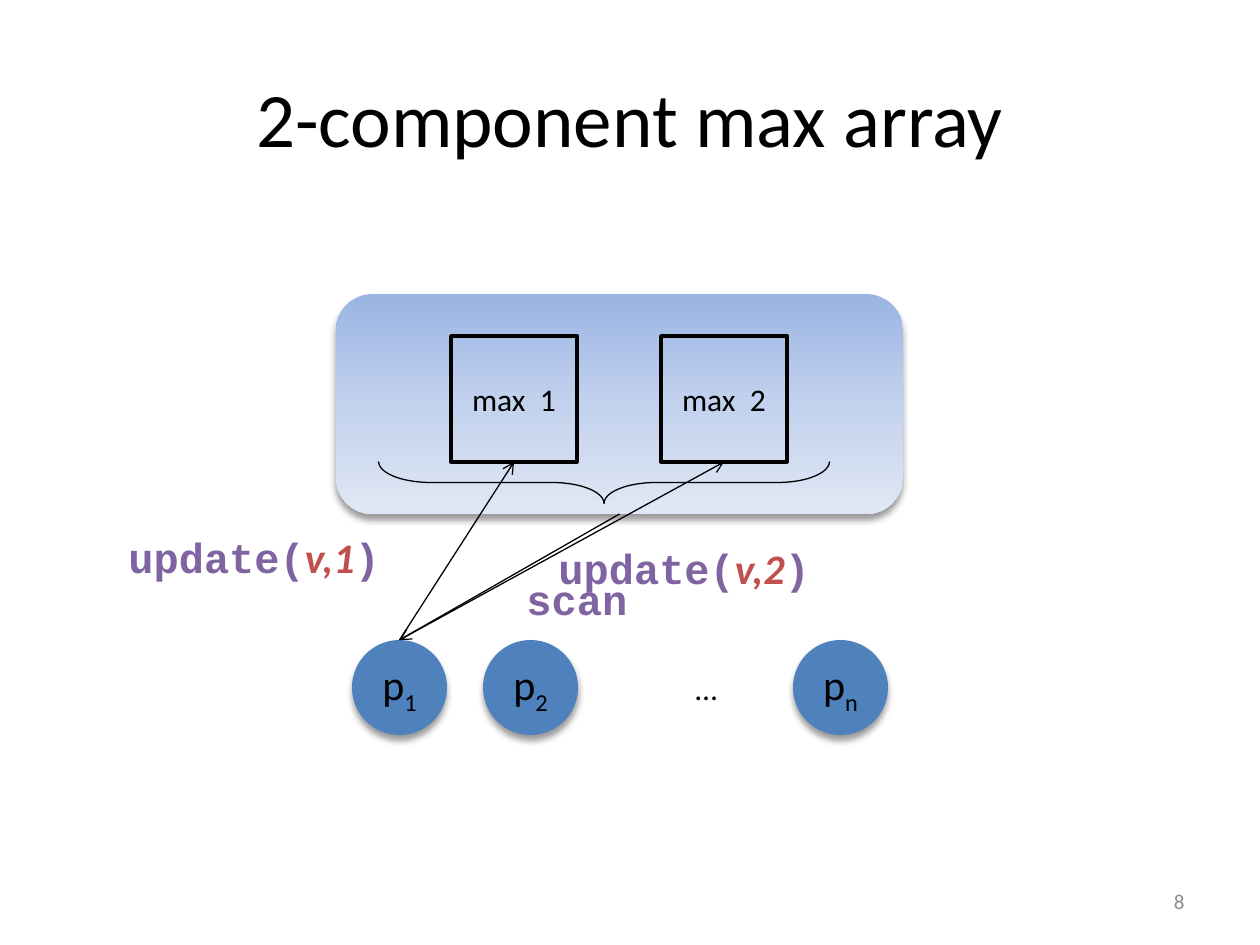
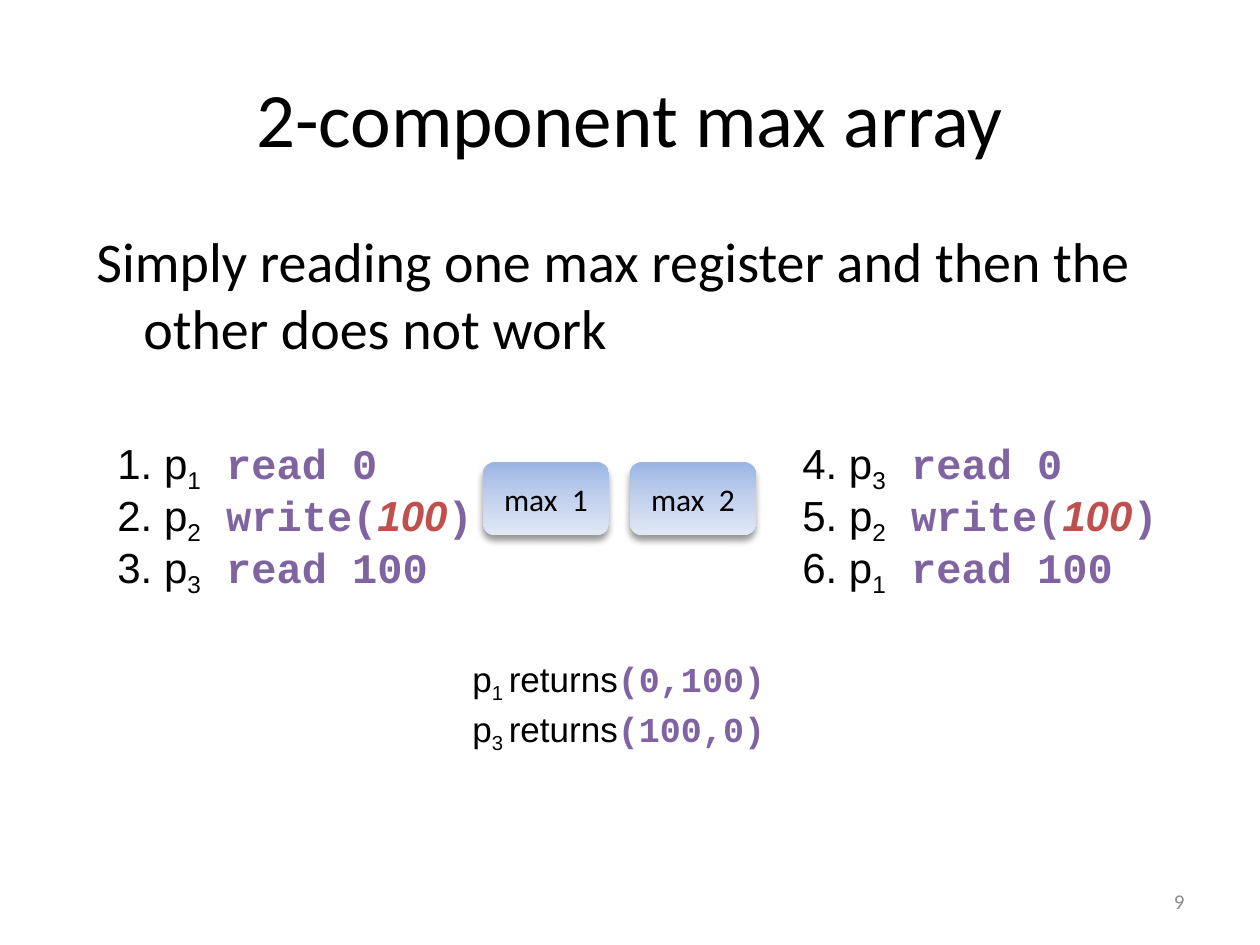
from copy import deepcopy
from dataclasses import dataclass, replace

from lxml import etree
from pptx import Presentation
from pptx import util as u
from pptx.dml.color import RGBColor
from pptx.enum import shapes, text
from pptx.oxml.ns import qn

PX_PER_INCH = 126
BLACK = RGBColor(0, 0, 0)
GREY = RGBColor(0x8C, 0x8C, 0x8C)
BLUE = RGBColor(0x4F, 0x81, 0xBD)
PURPLE = RGBColor(0x80, 0x64, 0xA2)
RED = RGBColor(0xC0, 0x50, 0x4D)
REGISTER_STOPS = (
    (0, RGBColor(0x9A, 0xB5, 0xE4)),
    (0.5, RGBColor(0xC2, 0xD1, 0xED)),
    (1, RGBColor(0xE1, 0xE8, 0xF5)),
)
TITLE = "2-component max array"
SHAPE = shapes.MSO_SHAPE
LEFT, CENTER, RIGHT = text.PP_ALIGN.LEFT, text.PP_ALIGN.CENTER, text.PP_ALIGN.RIGHT
TOP_SIDE, BOTTOM_SIDE = 0, 2


@dataclass(frozen=True)
class Style:
    font: str = "Calibri"
    color: RGBColor = BLACK
    bold: bool = False
    italic: bool = False
    subscript: bool = False


PLAIN = Style()
PLAIN_SUB = replace(PLAIN, subscript=True)
ARIAL = Style("Arial")
ARIAL_SUB = replace(ARIAL, subscript=True)
CODE = Style("Courier New", PURPLE, bold=True)
VALUE = Style("Arial", RED, bold=True, italic=True)
ARGUMENT = replace(VALUE, font="Calibri")


def px(length):
    return u.Emu(round(length * 914400 / PX_PER_INCH))


def box(*lengths):
    return [px(length) for length in lengths]


def apply_style(font, style):
    font.name = style.font
    font.color.rgb = style.color
    font.bold = style.bold
    font.italic = style.italic


def write(frame, parts, size, align=LEFT, anchor=text.MSO_ANCHOR.MIDDLE):
    """Fill a frame with (text, style) parts; the first style is the paragraph's."""
    frame.vertical_anchor = anchor
    paragraph = frame.paragraphs[0]
    paragraph.alignment = align
    paragraph.font.size = u.Pt(size)
    base = parts[0][1]
    apply_style(paragraph.font, base)
    for words, style in parts:
        run = paragraph.add_run()
        run.text = words
        if replace(style, subscript=False) != base:
            apply_style(run.font, style)
        if style.subscript:
            run.font._element.set("baseline", "-25000")
    return paragraph


def add_label(slide, bounds, parts, size=24, align=LEFT, wrap=True,
              anchor=text.MSO_ANCHOR.TOP):
    frame = slide.shapes.add_textbox(*box(*bounds)).text_frame
    frame.word_wrap = wrap
    return write(frame, parts, size, align, anchor)


def add_outline(slide, kind, bounds, width):
    outline = slide.shapes.add_shape(kind, *box(*bounds))
    outline.shadow.inherit = False
    outline.fill.background()
    outline.line.color.rgb = BLACK
    outline.line.width = u.Pt(width)
    return outline


def add_raised(slide, kind, bounds):
    """Add a borderless shape with a soft shadow below it."""
    raised = slide.shapes.add_shape(kind, *box(*bounds))
    raised.line.fill.background()
    raised.shadow.inherit = False
    effects = raised.element.spPr.find(qn("a:effectLst"))
    shadow = etree.SubElement(
        effects, qn("a:outerShdw"), blurRad=str(u.Pt(4)), dist=str(u.Pt(3)),
        dir="5400000", rotWithShape="0")
    black = etree.SubElement(shadow, qn("a:srgbClr"), val="000000")
    etree.SubElement(black, qn("a:alpha"), val="40000")
    return raised


def add_register(slide, bounds):
    register = add_raised(slide, SHAPE.ROUNDED_RECTANGLE, bounds)
    fill = register.fill
    fill.gradient()
    fill.gradient_angle = 270
    stop_list = register.element.spPr.find(".//" + qn("a:gsLst"))
    stop_list.insert(1, deepcopy(stop_list[0]))
    for stop, (position, color) in zip(fill.gradient_stops, REGISTER_STOPS):
        stop.position = position
        stop.color.rgb = color
    return register


def add_process(slide, left, index):
    process = add_raised(slide, SHAPE.OVAL, (left, 640, 95, 95))
    process.fill.solid()
    process.fill.fore_color.rgb = BLUE
    write(process.text_frame, [("p", PLAIN), (index, PLAIN_SUB)], 24, CENTER)
    return process


def add_arrow(slide, process, target, arrow_end="tailEnd"):
    """Join a process's top to a target's bottom, with an arrowhead at one end."""
    arrow = slide.shapes.add_connector(shapes.MSO_CONNECTOR.STRAIGHT, 0, 0, 0, 0)
    arrow.begin_connect(process, TOP_SIDE)
    arrow.end_connect(target, BOTTOM_SIDE)
    arrow.line.color.rgb = BLACK
    arrow.line.width = u.Pt(0.75)
    properties = arrow.element.spPr
    etree.SubElement(properties.find(qn("a:ln")), qn("a:" + arrow_end), type="arrow")
    etree.SubElement(properties, qn("a:effectLst"))


def add_titled_slide(prs, number):
    slide = prs.slides.add_slide(prs.slide_layouts[5])
    title = slide.shapes.title
    title.left, title.top, title.width, title.height = box(63, 38, 1134, 158)
    write(title.text_frame, [(TITLE, PLAIN)], 44, CENTER)
    add_label(slide, (903, 876, 294, 50), [(str(number), Style(color=GREY))], 12,
              RIGHT, anchor=text.MSO_ANCHOR.MIDDLE)
    return slide


def build_operations(prs):
    slide = add_titled_slide(prs, 8)
    array = add_register(slide, (336, 294, 567, 220))
    processes = [add_process(slide, left, index)
                 for left, index in ((352, "1"), (483, "2"), (793, "n"))]
    add_label(slide, (683, 663, 57, 50), [("…", PLAIN)], 18, wrap=False)

    caller = processes[0]
    updates = ((451, (116, 525)), (661, (546, 536)))
    for component, (left, label_corner) in enumerate(updates, 1):
        cell = add_outline(slide, SHAPE.RECTANGLE, (left, 336, 126, 126), 2)
        write(cell.text_frame, [(f"max  {component}", PLAIN)], 18, CENTER)
        add_arrow(slide, caller, cell)
        add_label(slide, (*label_corner, 294, 63),
                  [("update(", CODE), (f"v,{component}", ARGUMENT), (")", CODE)])

    add_arrow(slide, caller, array, "headEnd")
    add_label(slide, (514, 567, 252, 63), [("scan", CODE)])
    brace = add_outline(slide, SHAPE.RIGHT_BRACE, (583, 257, 42, 451), 0.75)
    brace.rotation = 90
    brace.adjustments[0] = 1.24


def build_counterexample(prs):
    slide = add_titled_slide(prs, 9)
    claim = add_label(
        slide, (84, 220, 1113, 683),
        [("Simply reading one max register and then the other does not work", PLAIN)], 32)
    indent = px(47)
    claim_properties = claim._p.get_or_add_pPr()
    claim_properties.set("marL", str(indent))
    claim_properties.set("indent", str(-indent))
    claim.space_before = u.Pt(6.4)

    for component in (1, 2):
        register = add_register(slide, (336 + 147 * component, 462, 126, 73))
        write(register.text_frame, [(f"max  {component}", PLAIN)], 18, CENTER)

    operations = (
        (290, [(" read 0", CODE)]),
        (386, [(" write(", CODE), ("100", VALUE), (")", CODE)]),
        (340, [(" read 100", CODE)]),
    )
    for left, first_step, processes in ((105, 1, "123"), (790, 4, "321")):
        for row, (process, (width, operation)) in enumerate(zip(processes, operations)):
            step = [(f"{first_step + row}. p", ARIAL), (process, ARIAL_SUB)]
            add_label(slide, (left, 431 + 52 * row, width, 63), step + operation,
                      wrap=False)

    for row, (process, result) in enumerate((("1", "(0,100)"), ("3", "(100,0)"))):
        add_label(slide, (460, 651 + 50 * row, 338, 55),
                  [("p", ARIAL), (f"{process} ", ARIAL_SUB), ("returns", ARIAL),
                   (result, CODE)], 20, wrap=False)


def main():
    prs = Presentation()
    prs.slide_width, prs.slide_height = px(1260), px(945)
    build_operations(prs)
    build_counterexample(prs)
    prs.save("out.pptx")


if __name__ == "__main__":
    main()
